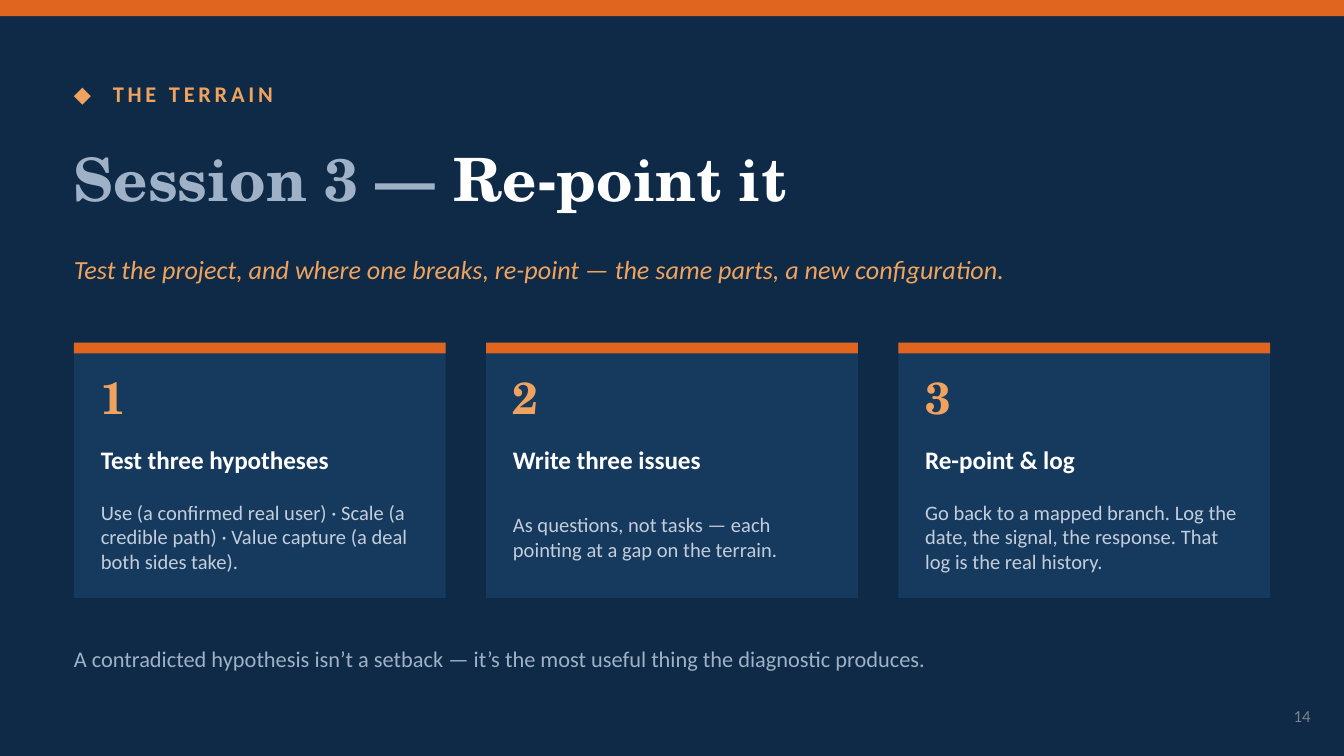
import pptx
import pptx.dml.color
import pptx.enum.shapes
import pptx.enum.text
import pptx.oxml
import pptx.oxml.ns
import pptx.util

Inches = pptx.util.Inches
Pt = pptx.util.Pt
ALIGN = pptx.enum.text.PP_ALIGN

NAVY, PANEL, ORANGE, AMBER = "0E2A47", "16395E", "E0661F", "F0A35E"
WHITE, MIST, PALE, GREY = "FFFFFF", "9FB1C6", "C3CEDC", "7A828B"
SANS, SERIF = "Calibri", "TeX Gyre Schola"

LEFT, CONTENT_W = 0.55, 8.9
CARD_TOP, CARD_H, CARD_GAP, CARD_PAD = 2.55, 1.9, 0.3, 0.2
CARDS = [
    ("Test three hypotheses",
     "Use (a confirmed real user) · Scale (a credible path) · "
     "Value capture (a deal both sides take)."),
    ("Write three issues",
     "As questions, not tasks — each pointing at a gap on the terrain."),
    ("Re-point & log",
     "Go back to a mapped branch. Log the date, the signal, the response. "
     "That log is the real history."),
]


def rgb(color):
    return pptx.dml.color.RGBColor.from_string(color)


def add_rect(s, x, y, w, h, color):
    sp = s.shapes.add_shape(pptx.enum.shapes.MSO_SHAPE.RECTANGLE,
                            Inches(x), Inches(y), Inches(w), Inches(h))
    sp.shadow.inherit = False
    sp.fill.solid()
    sp.fill.fore_color.rgb = rgb(color)
    sp.line.fill.background()


def set_frame(sp, inset=0):
    tf = sp.text_frame
    frame = {
        "word_wrap": True,
        "auto_size": pptx.enum.text.MSO_AUTO_SIZE.NONE,
        "vertical_anchor": pptx.enum.text.MSO_ANCHOR.MIDDLE,
        "margin_left": Inches(inset), "margin_right": Inches(inset),
        "margin_top": Inches(inset / 2), "margin_bottom": Inches(inset / 2),
    }
    for name, value in frame.items():
        setattr(tf, name, value)
    return tf


def add_run(p, text, color, **font):
    r = p.add_run()
    r.text = text
    r.font.color.rgb = rgb(color)
    for name, value in font.items():
        setattr(r.font, name, value)


def add_text(s, x, y, w, h, text, color, size, align=ALIGN.LEFT,
             inset=0, leading=None, name=SANS, **font):
    sp = s.shapes.add_textbox(Inches(x), Inches(y), Inches(w), Inches(h))
    p = set_frame(sp, inset).paragraphs[0]
    p.alignment = align
    if leading:
        p.line_spacing = Pt(leading)
    add_run(p, text, color, size=Pt(size), name=name, **font)
    return p


def add_title(s, parts):
    sp = s.shapes.title
    box = {"left": LEFT, "top": 0.92, "width": 9, "height": 0.8}
    for name, value in box.items():
        setattr(sp, name, Inches(value))
    p = set_frame(sp).paragraphs[0]
    p.alignment = ALIGN.LEFT
    for text, color in parts:
        add_run(p, text, color, size=Pt(32), name=SERIF, bold=True)


def add_kicker(s, text):
    p = add_text(s, LEFT, 0.55, 6, 0.3, "◆\t" + text, AMBER, 12, bold=True)
    tabs = pptx.oxml.parse_xml(
        f'<a:tabLst {pptx.oxml.ns.nsdecls("a")}>'
        f'<a:tab pos="{Inches(0.29)}" algn="l"/></a:tabLst>')
    p._p.get_or_add_pPr().append(tabs)
    p.runs[0].font._element.set("spc", "200")


def add_card(s, x, w, number, heading, body):
    add_rect(s, x, CARD_TOP, w, CARD_H, PANEL)
    add_rect(s, x, CARD_TOP, w, 0.08, ORANGE)
    tx, tw = x + CARD_PAD, w - 2 * CARD_PAD
    add_text(s, tx, 2.7, 0.6, 0.5, str(number), AMBER, 24,
             name=SERIF, bold=True)
    add_text(s, tx, 3.22, tw, 0.4, heading, WHITE, 13.5, bold=True)
    add_text(s, tx, 3.62, tw, 0.75, body, PALE, 11, leading=13)


def main():
    prs = pptx.Presentation()
    prs.slide_width = Inches(10)
    prs.slide_height = Inches(10 * 9 / 16)
    s = prs.slides.add_slide(prs.slide_layouts[5])
    s.background.fill.solid()
    s.background.fill.fore_color.rgb = rgb(NAVY)

    add_rect(s, 0, 0, 10, 0.12, ORANGE)
    add_kicker(s, "THE TERRAIN")
    add_title(s, [("Session 3 — ", MIST), ("Re-point it", WHITE)])
    add_text(s, LEFT, 1.78, 9, 0.45,
             "Test the project, and where one breaks, re-point — "
             "the same parts, a new configuration.", AMBER, 14, italic=True)

    card_w = (CONTENT_W - CARD_GAP * (len(CARDS) - 1)) / len(CARDS)
    for i, (heading, body) in enumerate(CARDS):
        add_card(s, LEFT + i * (card_w + CARD_GAP), card_w,
                 i + 1, heading, body)

    add_text(s, LEFT, 4.7, 9, 0.4,
             "A contradicted hypothesis isn’t a setback — "
             "it’s the most useful thing the diagnostic produces.", MIST, 12)
    add_text(s, 9.35, 5.18, 0.5, 0.3, "14", GREY, 9,
             align=ALIGN.RIGHT, inset=0.1)
    prs.save("out.pptx")


if __name__ == "__main__":
    main()
